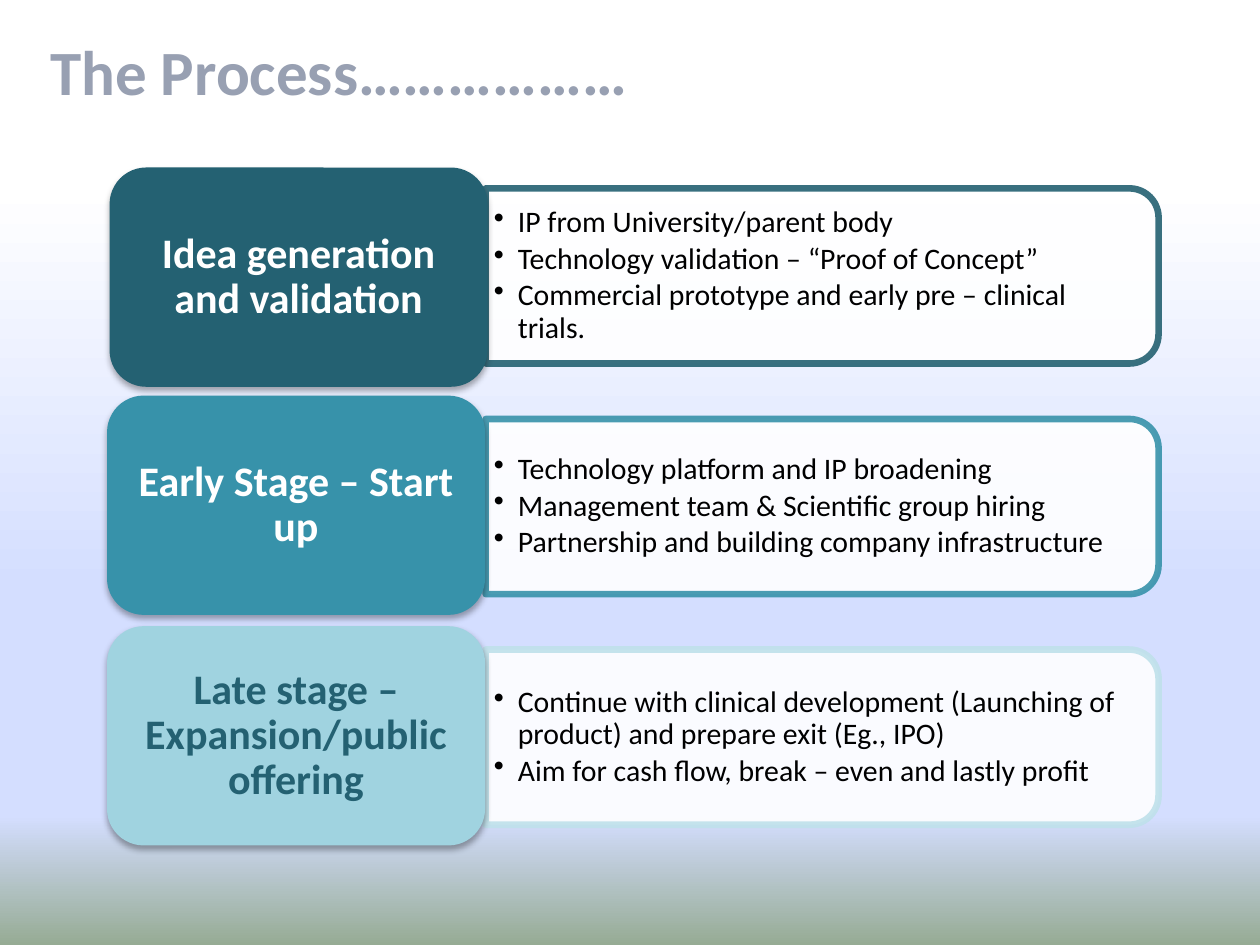
import copy

import lxml.etree
import pptx
import pptx.dml.color
import pptx.enum.shapes
import pptx.enum.text
import pptx.oxml.ns
import pptx.util

Inches = pptx.util.Inches
Pt = pptx.util.Pt
qn = pptx.oxml.ns.qn
SHAPE = pptx.enum.shapes.MSO_SHAPE
ALIGN = pptx.enum.text.PP_ALIGN

COLORS = {
    "white": "FFFFFF", "black": "000000", "title": "98A0B2",
    "sky": "D4DEFF", "grass": "96AB94",
    "deep": "246172", "teal": "3792AA", "pale": "A0D3E0", "mist": "BFE1EB",
}
ROW_PITCH = 1.83

# label, label left and top, label fill, label text colour, panel outline, bullets
STAGES = [
    ("Idea generation and validation", 0.87, 1.33, "deep", "white", "deep",
     ["IP from University/parent body",
      "Technology validation – “Proof of Concept”",
      "Commercial prototype and early pre – clinical trials."]),
    ("Early Stage – Start up", 0.85, 3.14, "teal", "white", "teal",
     ["Technology platform and IP broadening",
      "Management team & Scientific group hiring",
      "Partnership and building company infrastructure"]),
    ("Late stage – Expansion/public offering", 0.85, 4.97, "pale", "deep", "mist",
     ["Continue with clinical development (Launching of product) "
      "and prepare exit (Eg., IPO)",
      "Aim for cash flow, break – even and lastly profit"]),
]


def rgb(name):
    return pptx.dml.color.RGBColor.from_string(COLORS[name])


def add_child(parent, tag, **attributes):
    return lxml.etree.SubElement(
        parent, qn(tag), {key: str(value) for key, value in attributes.items()})


def set_alpha(fill_parent, percent):
    color = fill_parent.find(qn("a:solidFill")).find(qn("a:srgbClr"))
    add_child(color, "a:alpha", val=percent * 1000)


def write_text(frame, lines, size, color, font="Calibri", bold=False,
               align=ALIGN.LEFT, insets=(0.1, 0.05, 0.1, 0.05),
               line_spacing=1.0, space_after=0, bullet_indent=0):
    frame.word_wrap = True
    frame.vertical_anchor = pptx.enum.text.MSO_ANCHOR.MIDDLE
    (frame.margin_left, frame.margin_top,
     frame.margin_right, frame.margin_bottom) = map(Inches, insets)
    for index, line in enumerate(lines):
        paragraph = frame.paragraphs[0] if index == 0 else frame.add_paragraph()
        paragraph.alignment = align
        paragraph.line_spacing = line_spacing
        paragraph.space_after = Pt(space_after)
        if bullet_indent:
            paragraph.level = 1
            properties = paragraph._p.get_or_add_pPr()
            properties.set("marL", str(Inches(bullet_indent)))
            properties.set("indent", str(-Inches(bullet_indent)))
            add_child(properties, "a:buChar", char="•")
        run = paragraph.add_run()
        run.text = line
        run.font.name = font
        run.font.size = Pt(size)
        run.font.bold = bold
        run.font.color.rgb = rgb(color)


class ProcessSlide:
    def __init__(self, slide):
        self.slide = slide
        self.bullet_style = dict(size=17, color="black", line_spacing=0.9,
                                 space_after=2.5, bullet_indent=0.19,
                                 insets=(0.07, 0.04, 0.07, 0.04))
        self.label_style = dict(size=24, bold=True, align=ALIGN.CENTER,
                                line_spacing=0.9)

    def shape(self, preset, left, top, width, height):
        shape = self.slide.shapes.add_shape(
            preset, Inches(left), Inches(top), Inches(width), Inches(height))
        shape.shadow.inherit = False
        shape.line.fill.background()
        return shape

    def text(self, lines, left, top, width, height, **style):
        box = self.slide.shapes.add_textbox(
            Inches(left), Inches(top), Inches(width), Inches(height))
        write_text(box.text_frame, lines, **style)

    def backdrop(self, stops):
        backdrop = self.shape(SHAPE.RECTANGLE, 0, 1.47, 10, 6.03)
        backdrop.fill.gradient()
        backdrop.fill.gradient_angle = 270
        stop_list = backdrop._element.spPr.find(qn("a:gradFill")).find(qn("a:gsLst"))
        while len(stop_list) < len(stops):
            stop_list.append(copy.deepcopy(stop_list[0]))
        for stop, (position, color) in zip(backdrop.fill.gradient_stops, stops):
            stop.position = position
            stop.color.rgb = rgb(color)

    def panel(self, top, outline):
        panel = self.shape(SHAPE.ROUND_2_SAME_RECTANGLE, 5.83, top, 1.39, 5.34)
        panel.rotation = 90
        panel.fill.solid()
        panel.fill.fore_color.rgb = rgb("white")
        panel.line.color.rgb = rgb(outline)
        panel.line.width = Pt(3.78)
        properties = panel._element.spPr
        set_alpha(properties, 90)
        set_alpha(properties.find(qn("a:ln")), 90)

    def label(self, caption, left, top, fill, color):
        label = self.shape(SHAPE.ROUNDED_RECTANGLE, left, top, 3, 1.74)
        label.fill.solid()
        label.fill.fore_color.rgb = rgb(fill)
        effects = label._element.spPr.find(qn("a:effectLst"))
        shadow = add_child(effects, "a:outerShdw", blurRad=Pt(3.5), dist=Pt(2.2),
                           dir=90 * 60000, rotWithShape=0)
        shade = add_child(shadow, "a:srgbClr", val=COLORS["black"])
        add_child(shade, "a:alpha", val=32000)
        write_text(label.text_frame, [caption], color=color, **self.label_style)


def main():
    deck = pptx.Presentation()
    deck.slide_width, deck.slide_height = Inches(10), Inches(7.5)
    page = ProcessSlide(deck.slides.add_slide(deck.slide_layouts[6]))

    # Sky-to-grass background
    page.backdrop([(0, "white"), (0.53, "sky"), (0.83, "sky"), (1, "grass")])

    # One row per stage: outlined panel, bullets, label
    for row, (caption, left, top, fill, color, outline, bullets) in enumerate(STAGES):
        offset = row * ROW_PITCH
        page.panel(-0.48 + offset, outline)
        page.text(bullets, 3.85, 1.56 + offset, 5.27, 1.26, **page.bullet_style)
        page.label(caption, left, top, fill, color)

    # Title
    page.text(["The Process………………"], 0.3, 0.17, 9.9, 0.78, size=36,
              color="title", bold=True, insets=(0.1, 0.05, 0.05, 0.05))

    deck.save("out.pptx")


if __name__ == "__main__":
    main()
